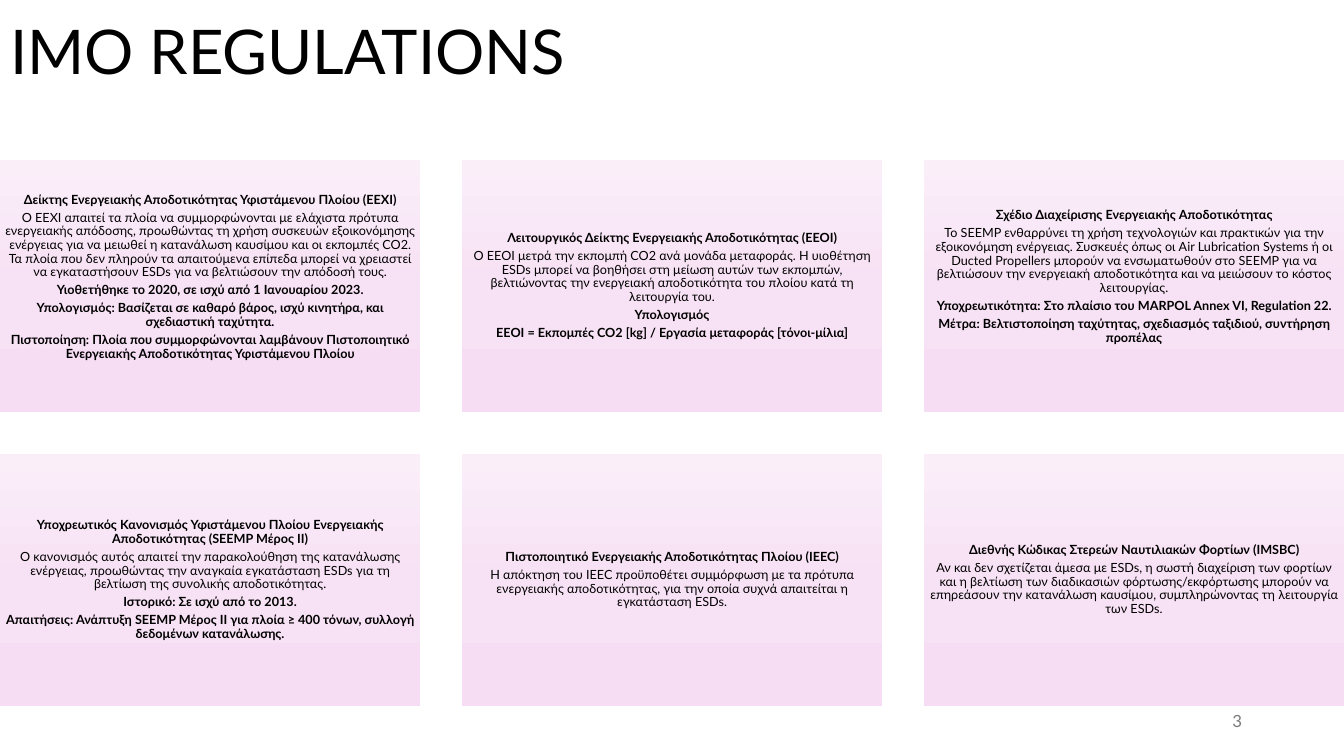
from copy import deepcopy
from dataclasses import dataclass

from pptx import Presentation
from pptx.dml.color import RGBColor
from pptx.enum.shapes import MSO_SHAPE as Shape
from pptx.enum.text import MSO_ANCHOR as Anchor, MSO_AUTO_SIZE as AutoSize, PP_ALIGN as Align
from pptx.oxml.ns import qn
from pptx.util import Emu, Pt

EMU_PER_PX = 914400 / 100.8
FONT = "Lato"
BLACK, GREY = "000000", "797979"
CARD_STOPS = ((0.0, "FAEEF9"), (0.5, "F7E1F4"), (1.0, "F6DDF4"))

# Card grid
COLUMNS = 3
CARD_TOP, CARD_WIDTH, CARD_HEIGHT = 160, 420, 252
GAP = 42
INSET = 4


@dataclass
class Regulation:
    heading: str
    body: str
    details: tuple[str, ...] = ()
    extra_bottom: int = 0


REGULATIONS = (
    Regulation(
        "Δείκτης Ενεργειακής Αποδοτικότητας Υφιστάμενου Πλοίου (EEXI)",
        "Ο EEXI απαιτεί τα πλοία να συμμορφώνονται με ελάχιστα πρότυπα ενεργειακής απόδοσης, "
        "προωθώντας τη χρήση συσκευών εξοικονόμησης ενέργειας για να μειωθεί η κατανάλωση καυσίμου "
        "και οι εκπομπές CO2. Τα πλοία που δεν πληρούν τα απαιτούμενα επίπεδα μπορεί να χρειαστεί "
        "να εγκαταστήσουν ESDs για να βελτιώσουν την απόδοσή τους.",
        ("Υιοθετήθηκε το 2020, σε ισχύ από 1 Ιανουαρίου 2023.",
         "Υπολογισμός: Βασίζεται σε καθαρό βάρος, ισχύ κινητήρα, και σχεδιαστική ταχύτητα.",
         "Πιστοποίηση: Πλοία που συμμορφώνονται λαμβάνουν Πιστοποιητικό Ενεργειακής "
         "Αποδοτικότητας Υφιστάμενου Πλοίου"),
        extra_bottom=18,
    ),
    Regulation(
        "Λειτουργικός Δείκτης Ενεργειακής Αποδοτικότητας (EEOI)",
        "Ο EEOI μετρά την εκπομπή CO2 ανά μονάδα μεταφοράς. Η υιοθέτηση ESDs μπορεί να βοηθήσει "
        "στη μείωση αυτών των εκπομπών, βελτιώνοντας την ενεργειακή αποδοτικότητα του πλοίου "
        "κατά τη λειτουργία του.",
        ("Υπολογισμός",
         "EEOI = Εκπομπές CO2 [kg] / Εργασία μεταφοράς [τόνοι-μίλια]"),
    ),
    Regulation(
        "Σχέδιο Διαχείρισης Ενεργειακής Aποδοτικότητας",
        "Το SEEMP ενθαρρύνει τη χρήση τεχνολογιών και πρακτικών για την εξοικονόμηση ενέργειας. "
        "Συσκευές όπως οι Air Lubrication Systems ή οι Ducted Propellers μπορούν να ενσωματωθούν "
        "στο SEEMP για να βελτιώσουν την ενεργειακή αποδοτικότητα και να μειώσουν το κόστος "
        "λειτουργίας.",
        ("Υποχρεωτικότητα: Στο πλαίσιο του MARPOL Annex VI, Regulation 22.",
         "Μέτρα: Βελτιστοποίηση ταχύτητας, σχεδιασμός ταξιδιού, συντήρηση προπέλας"),
        extra_bottom=18,
    ),
    Regulation(
        "Υποχρεωτικός Κανονισμός Υφιστάμενου Πλοίου Ενεργειακής Αποδοτικότητας (SEEMP Μέρος II)",
        "Ο κανονισμός αυτός απαιτεί την παρακολούθηση της κατανάλωσης ενέργειας, προωθώντας την "
        "αναγκαία εγκατάσταση ESDs για τη βελτίωση της συνολικής αποδοτικότητας.",
        ("Ιστορικό: Σε ισχύ από το 2013.",
         "Απαιτήσεις: Ανάπτυξη SEEMP Μέρος II για πλοία ≥ 400 τόνων, συλλογή δεδομένων "
         "κατανάλωσης."),
    ),
    Regulation(
        "Πιστοποιητικό Ενεργειακής Αποδοτικότητας Πλοίου (IEEC)",
        "Η απόκτηση του IEEC προϋποθέτει συμμόρφωση με τα πρότυπα ενεργειακής αποδοτικότητας, "
        "για την οποία συχνά απαιτείται η εγκατάσταση ESDs.",
    ),
    Regulation(
        "Διεθνής Κώδικας Στερεών Ναυτιλιακών Φορτίων (IMSBC)",
        "Αν και δεν σχετίζεται άμεσα με ESDs, η σωστή διαχείριση των φορτίων και η βελτίωση των "
        "διαδικασιών φόρτωσης/εκφόρτωσης μπορούν να επηρεάσουν την κατανάλωση καυσίμου, "
        "συμπληρώνοντας τη λειτουργία των ESDs.",
    ),
)


def px(length: int) -> Emu:
    return Emu(round(length * EMU_PER_PX))


def colour(value: str) -> RGBColor:
    return RGBColor.from_string(value)


def add_span(para, text: str, size: int, ink: str, bold: bool = False) -> None:
    span = para.add_run()
    span.text = text
    span.font.name = FONT
    span.font.size = Pt(size)
    span.font.bold = bold
    span.font.color.rgb = colour(ink)


def fill_gradient(box) -> None:
    box.fill.gradient()
    box.fill.gradient_angle = 270
    # A new gradient has two stops; the card needs a third
    first_stop = next(box._element.spPr.iter(qn("a:gs")))
    first_stop.addnext(deepcopy(first_stop))
    for stop, (position, shade) in zip(box.fill.gradient_stops, CARD_STOPS):
        stop.position = position
        stop.color.rgb = colour(shade)


def add_title(page, text: str) -> None:
    title = page.shapes.title
    title.left, title.top, title.width, title.height = px(0), px(0), px(1361), px(109)
    frame = title.text_frame
    frame.auto_size = AutoSize.NONE
    frame.vertical_anchor = Anchor.MIDDLE
    para = frame.paragraphs[0]
    para.alignment = Align.LEFT
    para.line_spacing = 0.9
    add_span(para, text, 44, BLACK)


def add_card(page, index: int, regulation: Regulation) -> None:
    row, column = divmod(index, COLUMNS)
    box = page.shapes.add_shape(
        Shape.RECTANGLE,
        px(column * (CARD_WIDTH + GAP)), px(CARD_TOP + row * (CARD_HEIGHT + GAP)),
        px(CARD_WIDTH), px(CARD_HEIGHT))
    box.shadow.inherit = False
    box.line.fill.background()
    fill_gradient(box)

    frame = box.text_frame
    frame.word_wrap = True
    frame.vertical_anchor = Anchor.MIDDLE
    frame.margin_left = frame.margin_right = frame.margin_top = px(INSET)
    frame.margin_bottom = px(INSET + regulation.extra_bottom)
    texts = (regulation.heading, regulation.body, *regulation.details)
    for number, text in enumerate(texts):
        para = frame.add_paragraph() if number else frame.paragraphs[0]
        para.alignment = Align.CENTER
        para.line_spacing = 0.9
        para.space_after = Pt(3.15)
        add_span(para, text, 9, BLACK, bold=text != regulation.body)


def add_page_number(page, text: str) -> None:
    box = page.shapes.add_textbox(px(950), px(701), px(302), px(40))
    frame = box.text_frame
    frame.word_wrap = True
    frame.vertical_anchor = Anchor.MIDDLE
    para = frame.paragraphs[0]
    para.alignment = Align.RIGHT
    add_span(para, text, 12, GREY)


def main() -> None:
    deck = Presentation()
    deck.slide_width, deck.slide_height = px(1344), px(756)
    page = deck.slides.add_slide(deck.slide_layouts.get_by_name("Title Only"))

    add_title(page, "IMO REGULATIONS")
    for index, regulation in enumerate(REGULATIONS):
        add_card(page, index, regulation)
    add_page_number(page, "3")

    deck.save("out.pptx")


if __name__ == "__main__":
    main()
